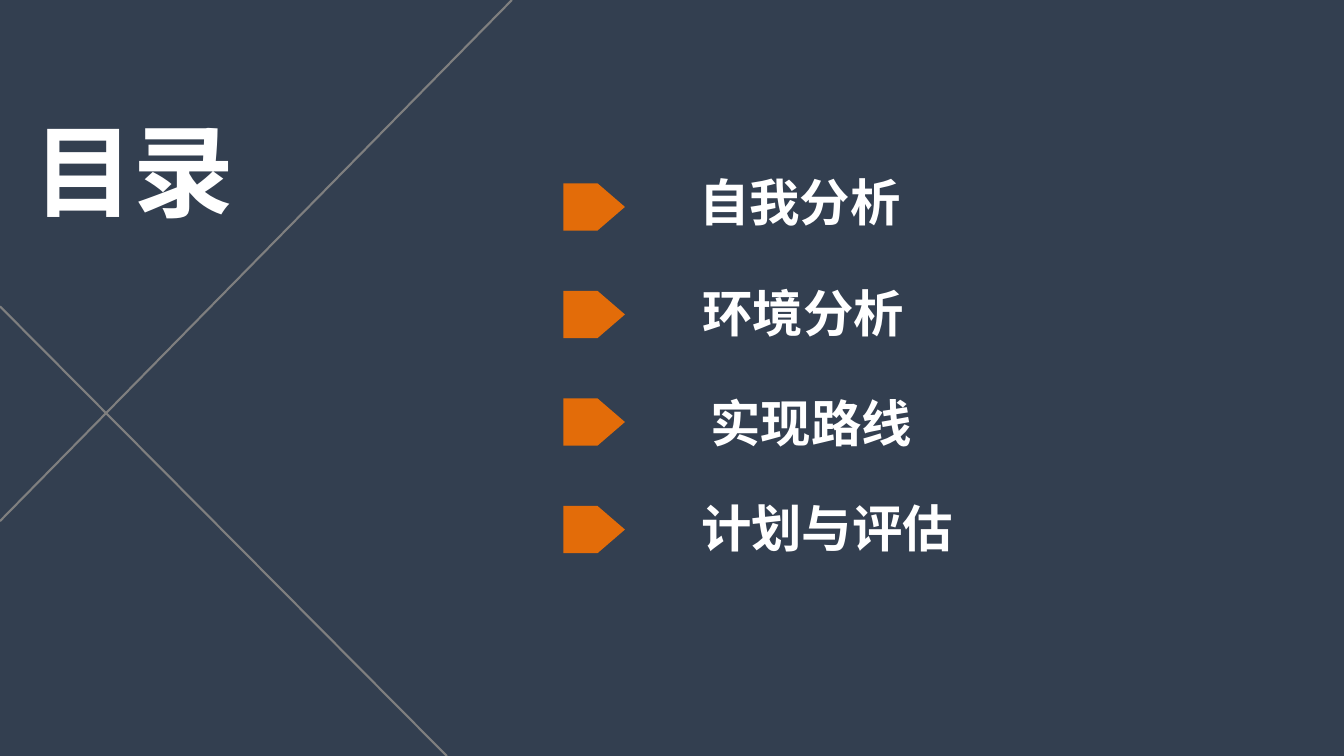
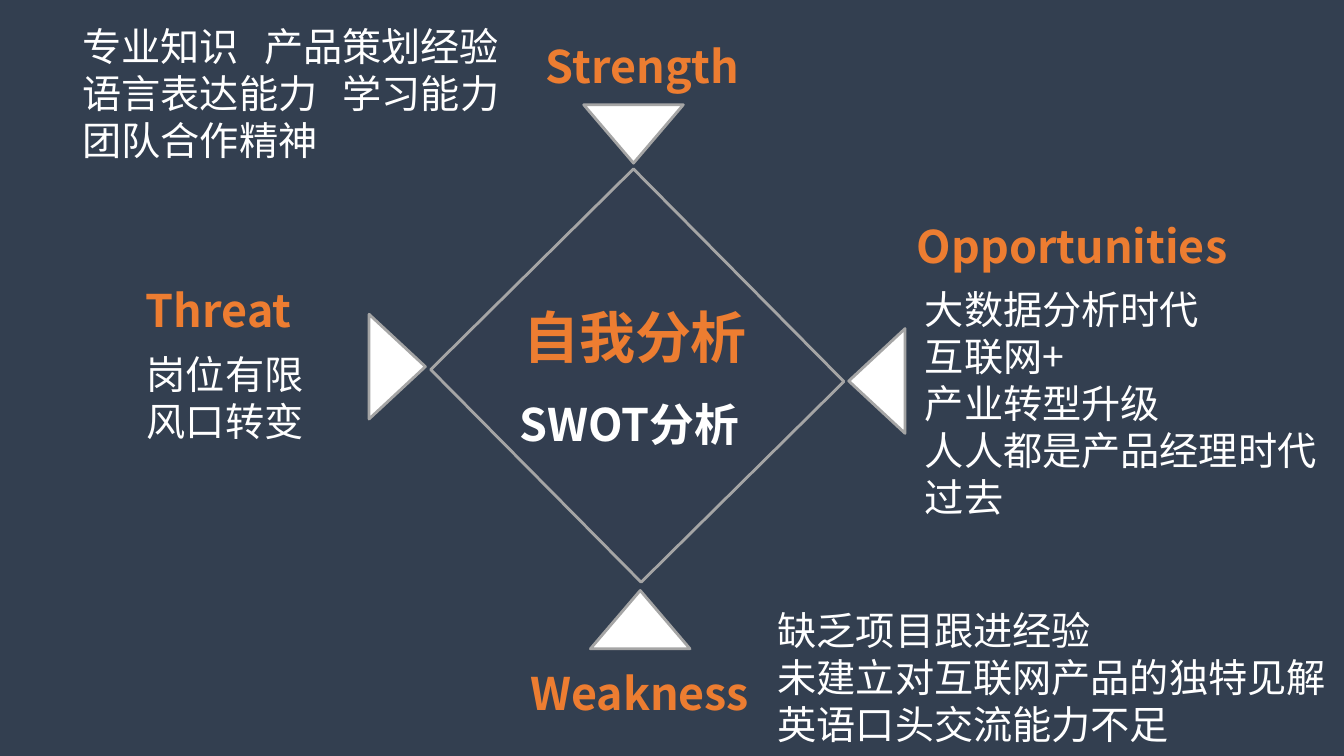
import pptx
import pptx.dml.color
import pptx.enum.shapes
import pptx.enum.text
import pptx.oxml.ns
import pptx.util
from lxml import etree
from pptx.util import Cm

COLORS = {
    "background": "333F50",
    "diamond": "333E50",
    "text": "FFFFFF",
    "accent": "ED7D31",
    "arrow": "E36C09",
    "crossing": "7F7F7F",
    "outline": "A5A5A5",
}
FONT = "Noto Sans CJK SC"
SHAPES = pptx.enum.shapes.MSO_SHAPE


def color(name):
    return pptx.dml.color.RGBColor.from_string(COLORS[name])


class Style:
    """Draws the elements of the deck on its current page in one shared style."""

    def __init__(self):
        self.deck = pptx.Presentation()
        self.deck.slide_width = Cm(33.87)
        self.deck.slide_height = Cm(19.05)
        self.page = None

    def add_page(self):
        self.page = self.deck.slides.add_slide(self.deck.slide_layouts[5])
        fill = self.page.background.fill
        fill.solid()
        fill.fore_color.rgb = color("background")

    def set_text(self, box, text, size, color_name, bold):
        frame = box.text_frame
        frame.text = text
        frame.word_wrap = True
        frame.auto_size = pptx.enum.text.MSO_AUTO_SIZE.NONE
        frame.vertical_anchor = pptx.enum.text.MSO_ANCHOR.TOP
        for para in frame.paragraphs:
            para.alignment = pptx.enum.text.PP_ALIGN.LEFT
            for span in para.runs:
                span.font.name = FONT
                span.font.size = pptx.util.Pt(size)
                span.font.bold = bold
                span.font.color.rgb = color(color_name)
                east_asian = etree.SubElement(
                    span.font._element, pptx.oxml.ns.qn("a:ea"))
                east_asian.set("typeface", FONT)

    def title(self, text, left, top, width, height, size, color_name):
        box = self.page.shapes.title
        box.left, box.top = Cm(left), Cm(top)
        box.width, box.height = Cm(width), Cm(height)
        self.set_text(box, text, size, color_name, True)
        box.element.getparent().append(box.element)

    def text(self, text, left, top, width, height, size,
             color_name="text", bold=False):
        box = self.page.shapes.add_textbox(
            Cm(left), Cm(top), Cm(width), Cm(height))
        self.set_text(box, text, size, color_name, bold)
        return box

    def heading(self, text, left, top, width, color_name="accent"):
        self.text(text, left, top, width, 1.7, 32, color_name, True)

    def body(self, lines, left, top, width):
        height = 0.5 + 1.2 * len(lines)
        return self.text("\n".join(lines), left, top, width, height, 28)

    def right_tab(self, box, position):
        for para in box.text_frame.paragraphs:
            properties = para._p.get_or_add_pPr()
            tabs = etree.SubElement(properties, pptx.oxml.ns.qn("a:tabLst"))
            tab = etree.SubElement(tabs, pptx.oxml.ns.qn("a:tab"))
            tab.set("pos", str(Cm(position)))
            tab.set("algn", "r")

    def shape(self, kind, left, top, width, height, fill,
              outline=None, rotation=0):
        shape = self.page.shapes.add_shape(
            kind, Cm(left), Cm(top), Cm(width), Cm(height))
        shape.shadow.inherit = False
        shape.rotation = rotation
        shape.fill.solid()
        shape.fill.fore_color.rgb = color(fill)
        if outline:
            shape.line.color.rgb = color(outline)
            shape.line.width = pptx.util.Pt(2)
        else:
            shape.line.fill.background()
        return shape

    def line(self, start_x, start_y, end_x, end_y):
        line = self.page.shapes.add_connector(
            pptx.enum.shapes.MSO_CONNECTOR.STRAIGHT,
            Cm(start_x), Cm(start_y), Cm(end_x), Cm(end_y))
        line.line.color.rgb = color("crossing")
        line.line.width = pptx.util.Pt(1.5)
        etree.SubElement(
            line.element.spPr, pptx.oxml.ns.qn("a:effectLst"))


def build_contents(style):
    style.add_page()
    style.line(12.9, 0, 0, 13.13)
    style.line(0, 7.72, 11.26, 19.05)
    style.title("目录", 0.58, 2.6, 18.8, 3.5, 72, "text")
    chapters = [
        ("自我分析", 17.37, 4.19),
        ("环境分析", 17.45, 6.99),
        ("实现路线", 17.65, 9.75),
        ("计划与评估", 17.42, 12.4),
    ]
    for index, (chapter, left, top) in enumerate(chapters):
        arrow = style.shape(
            SHAPES.PENTAGON, 14.2, 4.62 + 2.71 * index, 1.55, 1.19, "arrow")
        arrow.adjustments[0] = 0.58
        style.text(chapter, left, top, 10, 1.85, 36, bold=True)


def build_swot(style):
    style.add_page()
    style.shape(SHAPES.RECTANGLE, 12.29, 5.87, 7.54, 7.19,
                "diamond", "outline", 45.3)
    pointers = [
        (14.71, 2.64, 2.51, 1.47, 180),
        (20.78, 8.89, 2.64, 1.42, 270),
        (8.69, 8.53, 2.64, 1.42, 90),
        (14.88, 14.88, 2.51, 1.47, 0),
    ]
    for left, top, width, height, rotation in pointers:
        style.shape(SHAPES.ISOSCELES_TRIANGLE, left, top, width, height,
                    "text", "outline", rotation)

    style.title("自我分析", 12.93, 7.49, 6.6, 2.06, 40, "accent")
    style.heading("SWOT分析", 12.85, 9.88, 6.9, "text")
    style.heading("Strength", 13.51, 0.84, 5.5)
    style.heading("Opportunities", 22.86, 5.38, 8.8)
    style.heading("Weakness", 13.11, 16.66, 7.15)
    style.heading("Threat", 3.43, 7.01, 7.15)

    strengths = style.body(
        ["专业知识\t产品策划经验", "语言表达能力\t学习能力", "团队合作精神"],
        1.83, 0.43, 13.4)
    style.right_tab(strengths, 10.5)
    style.body(
        ["缺乏项目跟进经验", "未建立对互联网产品的独特见解", "英语口头交流能力不足"],
        19.35, 15.16, 14.5)
    style.body(
        ["大数据分析时代", "互联网+", "产业转型升级", "人人都是产品经理时代过去"],
        23.06, 7.06, 10.8)
    style.body(["岗位有限", "风口转变"], 3.45, 8.71, 6.68)


def main():
    style = Style()
    build_contents(style)
    build_swot(style)
    style.deck.save("out.pptx")


if __name__ == "__main__":
    main()
